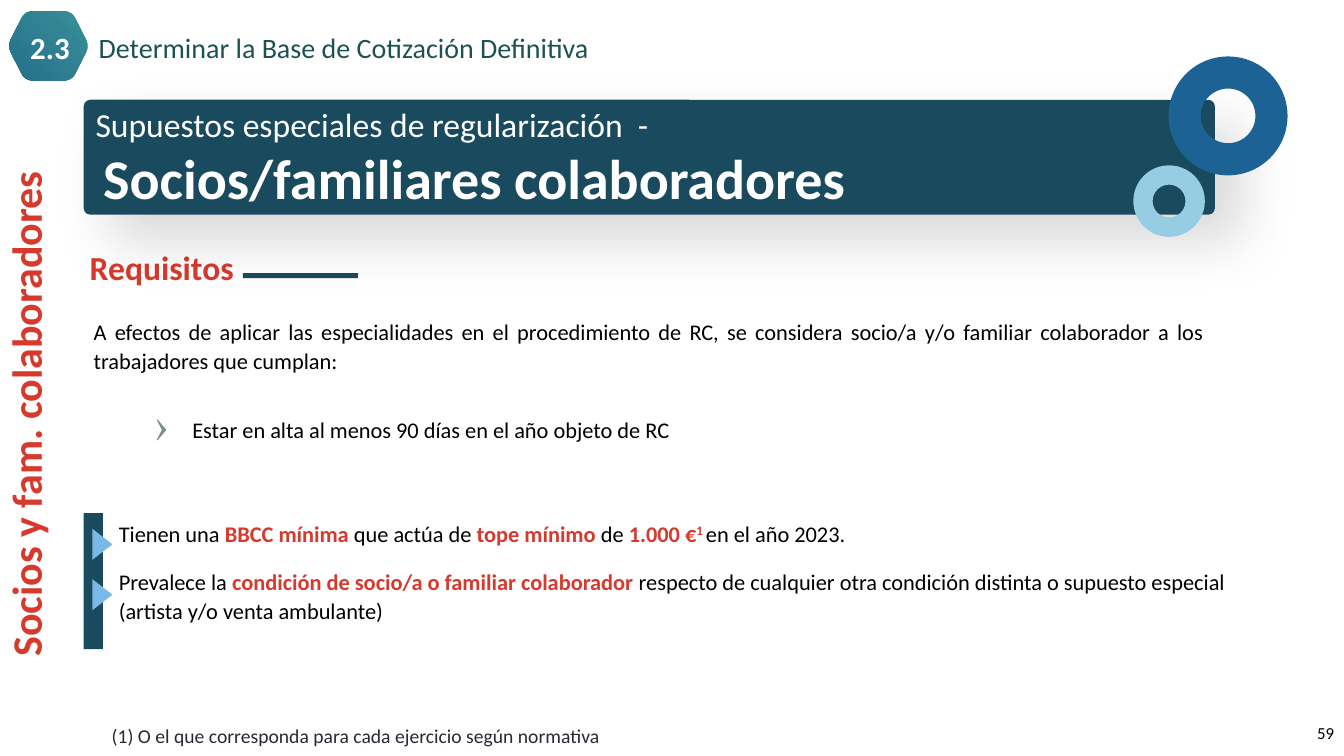
"""Builds the slide on special regularisation cases for partners and family collaborators."""
from lxml import etree
from pptx import Presentation
from pptx import util as u
from pptx.dml.color import RGBColor
from pptx.enum import shapes, text
from pptx.oxml.ns import qn

NAVY, RED, BLACK, WHITE = "194A5D", "D73A2C", "000000", "FFFFFF"
SKY, GREY = "7AB9E7", "7A8C8E"
STRONG = {"color": RED, "bold": True}
BODY = {"align": text.PP_ALIGN.JUSTIFY, "spacing": 1.07, "after": 8}

PAGE = "59"
SECTION_NUMBER = "2.3"
SECTION = "Determinar la Base de Cotización Definitiva"
SIDE_TITLE = "Socios y fam. colaboradores "
BANNER = [
    [("Supuestos especiales de regularización  -", {})],
    [(" ", {}), ("Socios/familiares colaboradores", {"size": 40, "bold": True})],
]
HEADING = "Requisitos"
INTRO = ("A efectos de aplicar las especialidades en el procedimiento de RC, se considera "
         "socio/a y/o familiar colaborador a los trabajadores que cumplan: ")
REQUIREMENT = "Estar en alta al menos 90 días en el año objeto de RC"
MINIMUM_BASE = [[
    ("Tienen una ", {}), ("BBCC mínima ", STRONG), ("que actúa de ", {}),
    ("tope mínimo ", STRONG), ("de ", {}), ("1.000 €", STRONG),
    ("1 ", {**STRONG, "raised": True}), ("en el año 2023.", {}),
]]
PRECEDENCE = [[
    ("Prevalece la ", {}), ("condición de socio/a o familiar colaborador ", STRONG),
    ("respecto de cualquier otra condición distinta o supuesto especial "
     "(artista y/o venta ambulante)", {}),
]]
FOOTNOTE = "(1) O el que corresponda para cada ejercicio según normativa"

RINGS = [((11.59, 0.56, 1.18, 1.18), "1C6294"), ((11.24, 1.64, 0.71, 0.71), "96CDE2")]
MARKER_TOPS = [5.3, 5.8]
HEXAGON = [(0.25, 0.11), (0.71, 0.11), (0.885, 0.455),
           (0.71, 0.8), (0.25, 0.8), (0.075, 0.455)]
CORNER_SHARE = 0.2
CORNER_STEPS = 6


def rgb(value):
    return RGBColor.from_string(value)


def add_xml(parent, tag, **attributes):
    return etree.SubElement(parent, qn(tag), {key: str(val) for key, val in attributes.items()})


def add_bullet(paragraph, mark, color, percent, indent):
    properties = paragraph._p.get_or_add_pPr()
    properties.set("marL", str(u.Inches(indent)))
    properties.set("indent", str(-u.Inches(indent)))
    add_xml(add_xml(properties, "a:buClr"), "a:srgbClr", val=color)
    add_xml(properties, "a:buSzPct", val=percent * 1000)
    add_xml(properties, "a:buChar", char=mark)


def write(shape, content, size=16, color=BLACK, bold=False, align=text.PP_ALIGN.LEFT,
          anchor=text.MSO_ANCHOR.TOP, spacing=None, after=None, insets=(0.1, 0.05),
          bullet=None, vertical=None):
    frame = shape.text_frame
    frame.word_wrap = True
    frame.vertical_anchor = anchor
    frame.margin_left = frame.margin_right = u.Inches(insets[0])
    frame.margin_top = frame.margin_bottom = u.Inches(insets[1])
    if vertical:
        frame._txBody.bodyPr.set("vert", vertical)
    paragraphs = [[(content, {})]] if isinstance(content, str) else content
    for index, runs in enumerate(paragraphs):
        paragraph = frame.add_paragraph() if index else frame.paragraphs[0]
        paragraph.alignment = align
        if spacing:
            paragraph.line_spacing = spacing
        if after:
            paragraph.space_after = u.Pt(after)
        if bullet:
            add_bullet(paragraph, *bullet)
        for words, style in runs:
            run = paragraph.add_run()
            run.text = words
            run.font.name = "Calibri"
            run.font.size = u.Pt(style.get("size", size))
            run.font.bold = style.get("bold", bold)
            run.font.color.rgb = rgb(style.get("color", color))
            if style.get("raised"):
                run._r.get_or_add_rPr().set("baseline", "30000")


def add_text(slide, box, content, **style):
    write(slide.shapes.add_textbox(*map(u.Inches, box)), content, **style)


def add_block(slide, kind, box, color, rotation=0):
    shape = slide.shapes.add_shape(kind, *map(u.Inches, box))
    shape.shadow.inherit = False
    shape.fill.solid()
    shape.fill.fore_color.rgb = rgb(color)
    shape.line.fill.background()
    shape.rotation = rotation
    return shape


def add_soft_shadow(shape):
    effects = shape._element.spPr.find(qn("a:effectLst"))
    shadow = add_xml(effects, "a:outerShdw", blurRad=u.Pt(40), dist=u.Pt(26),
                     dir=45 * 60000, algn="tl", rotWithShape=0)
    add_xml(add_xml(shadow, "a:srgbClr", val=BLACK), "a:alpha", val=15000)


def rounded_outline(corners):
    points = []
    for index, corner in enumerate(corners):
        before, following = corners[index - 1], corners[(index + 1) % len(corners)]
        start, end = [[c + (n - c) * CORNER_SHARE for c, n in zip(corner, neighbour)]
                      for neighbour in (before, following)]
        for step in range(CORNER_STEPS + 1):
            t = step / CORNER_STEPS
            points.append(tuple(u.Inches((1 - t) ** 2 * s + 2 * t * (1 - t) * c + t * t * e)
                                for s, c, e in zip(start, corner, end)))
    return points


def add_badge(slide):
    points = rounded_outline(HEXAGON)
    builder = slide.shapes.build_freeform(*points[0])
    builder.add_line_segments(points[1:], close=True)
    badge = builder.convert_to_shape()
    badge.shadow.inherit = False
    badge.line.fill.background()
    badge.fill.gradient()
    for stop, color in zip(badge.fill.gradient_stops, ("266F8B", "398F98")):
        stop.color.rgb = rgb(color)
    gradient = badge._element.spPr.find(qn("a:gradFill"))
    gradient.remove(gradient.find(qn("a:lin")))
    add_xml(add_xml(gradient, "a:path", path="circle"), "a:fillToRect", t=100000, r=100000)


def main():
    presentation = Presentation()
    presentation.slide_width, presentation.slide_height = u.Inches(13.33), u.Inches(7.5)
    slide = presentation.slides.add_slide(presentation.slide_layouts[6])
    kinds, middle = shapes.MSO_SHAPE, text.MSO_ANCHOR.MIDDLE
    center, justify = text.PP_ALIGN.CENTER, text.PP_ALIGN.JUSTIFY

    add_text(slide, (10.33, 7.07, 3, 0.4), PAGE, size=12, align=text.PP_ALIGN.RIGHT,
             anchor=middle)
    add_text(slide, (0.89, 2.45, 1.77, 0.4), HEADING, size=24, color=RED, bold=True,
             insets=(0, 0))
    add_block(slide, kinds.RECTANGLE, (2.41, 2.71, 1.14, 0.05), NAVY)

    banner = add_block(slide, kinds.ROUNDED_RECTANGLE, (0.83, 0.99, 11.22, 1.14), NAVY)
    banner.adjustments[0] = 0.058
    add_soft_shadow(banner)
    write(banner, BANNER, size=24, color=WHITE, anchor=middle)
    for box, color in RINGS:
        add_block(slide, kinds.DONUT, box, color).adjustments[0] = 0.27

    add_text(slide, (1.08, 5.09, 11.9, 0.38), MINIMUM_BASE, **BODY)
    add_text(slide, (0.83, 3.09, 11.21, 0.66), INTRO, **BODY)
    add_text(slide, (1.08, 5.57, 11.17, 0.66), PRECEDENCE, **BODY)
    add_block(slide, kinds.RECTANGLE, (0.83, 5.09, 0.19, 1.35), NAVY)
    for top in MARKER_TOPS:
        add_block(slide, kinds.ISOSCELES_TRIANGLE, (0.86, top, 0.31, 0.2), SKY, rotation=90)
    add_text(slide, (1.43, 4.08, 9.63, 0.37), REQUIREMENT, align=justify, after=6,
             bullet=("›", GREY, 200, 0.38))

    add_text(slide, (0.1, 0.8, 0.3, 6.52), SIDE_TITLE, size=30, color=RED, bold=True,
             align=center, anchor=middle, vertical="vert270")
    add_text(slide, (1.01, 7.13, 10.09, 0.34), FOOTNOTE, size=14, color="292834",
             align=justify)
    add_text(slide, (0.88, 0.3, 11.58, 0.39), SECTION, size=20, color="1D5253",
             spacing=0.85, after=6)
    add_badge(slide)
    add_text(slide, (0.17, 0.35, 0.65, 0.3), SECTION_NUMBER, size=22, color=WHITE, bold=True,
             align=center, anchor=middle, spacing=0.8, insets=(0.1, 0))
    presentation.save("out.pptx")


if __name__ == "__main__":
    main()
